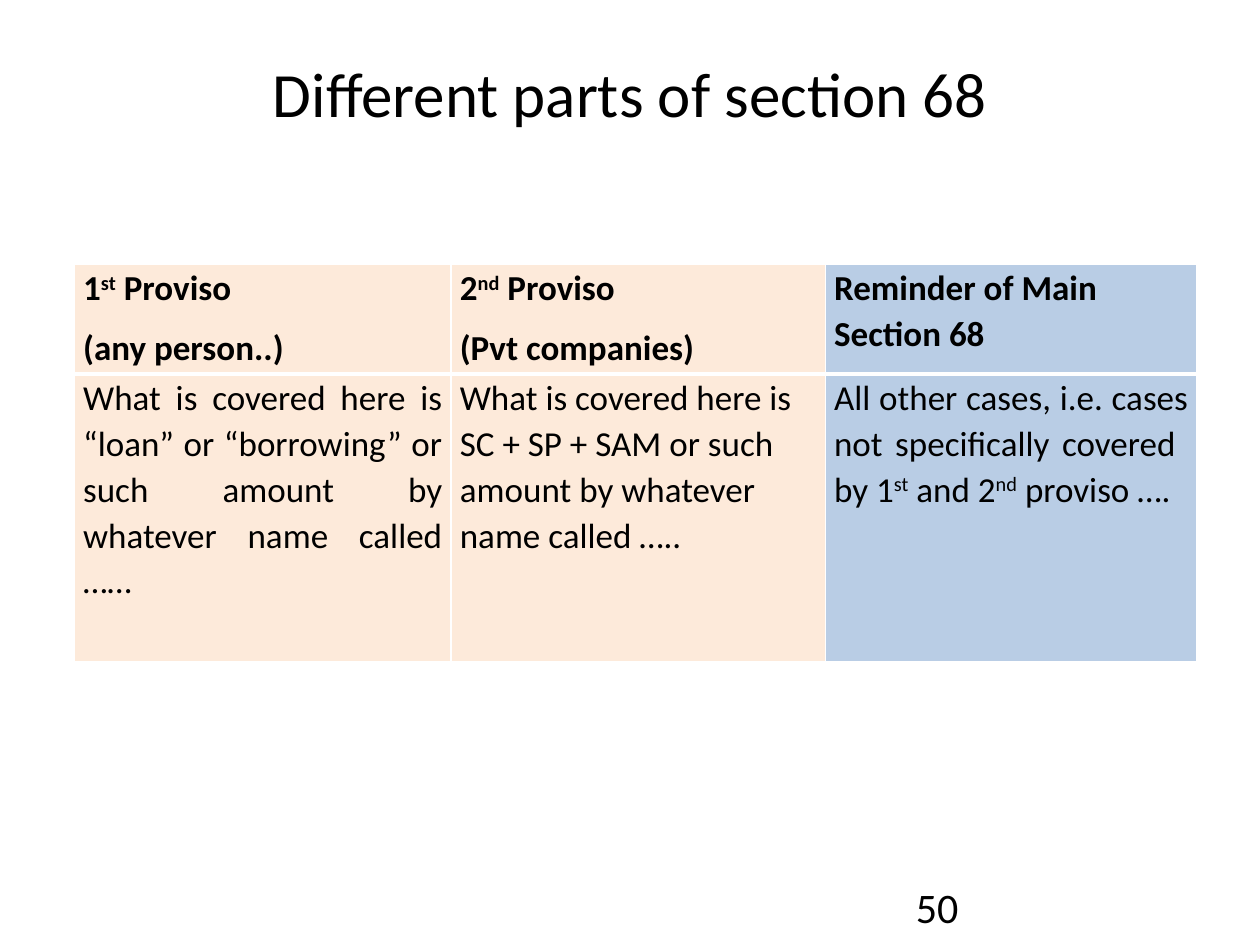
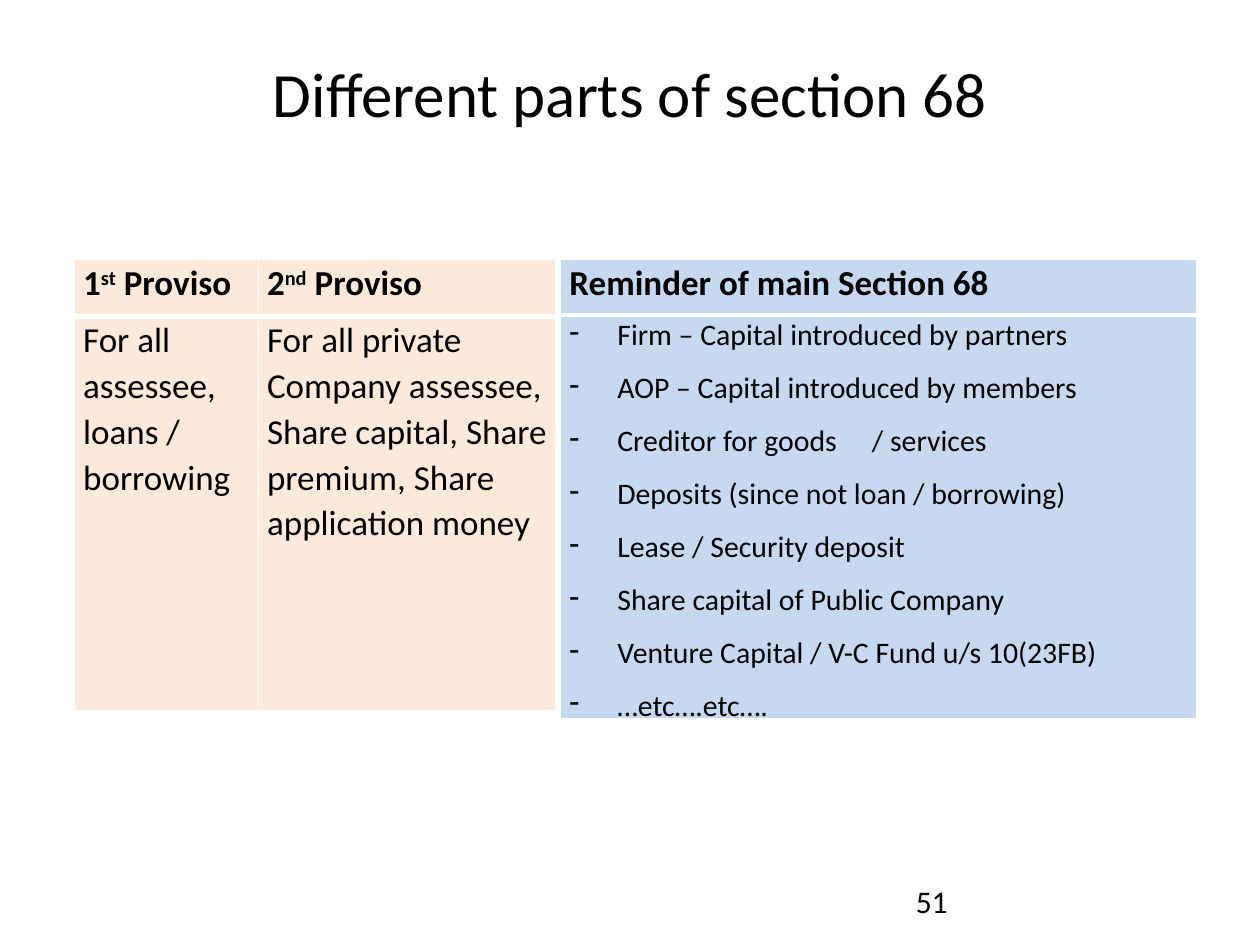
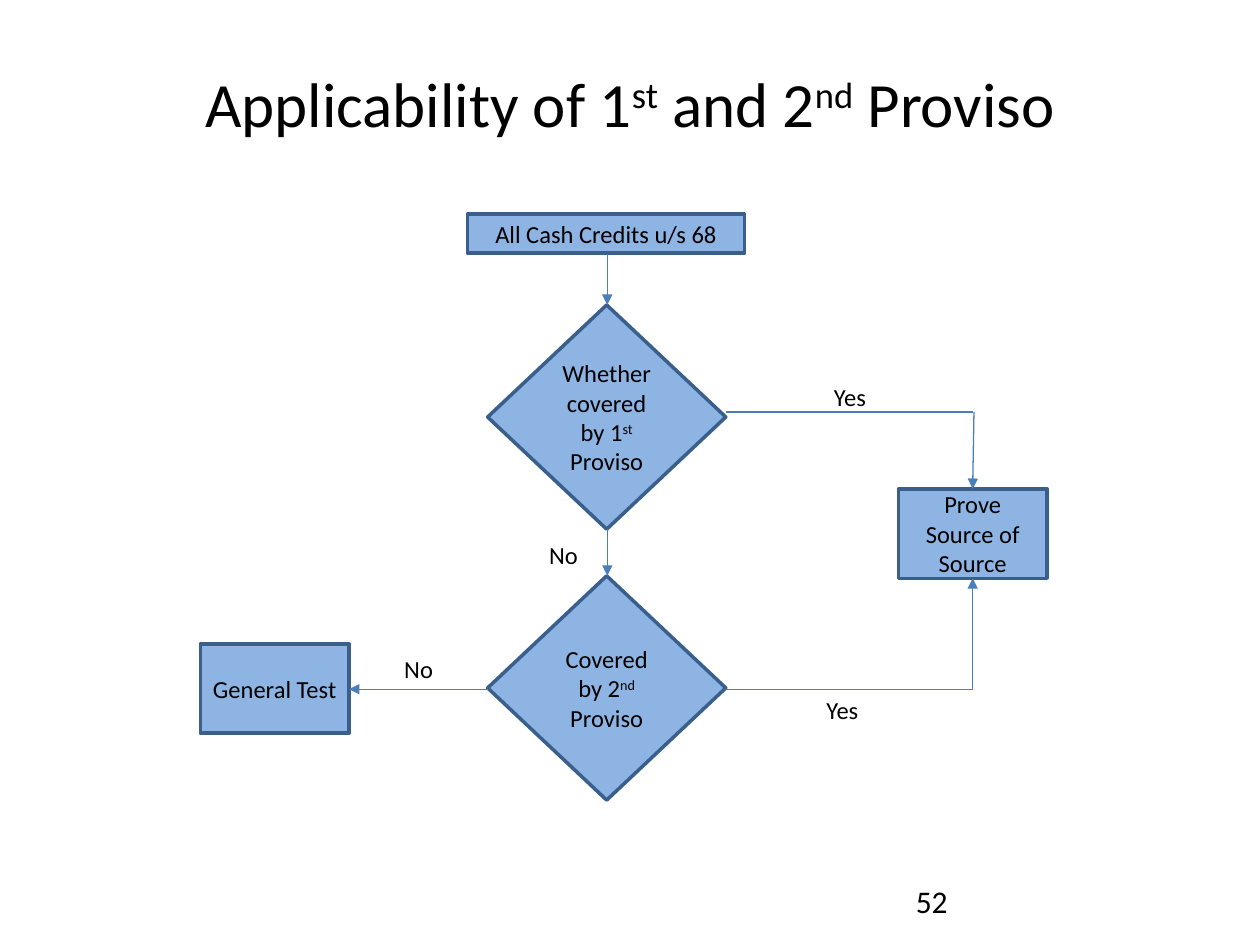
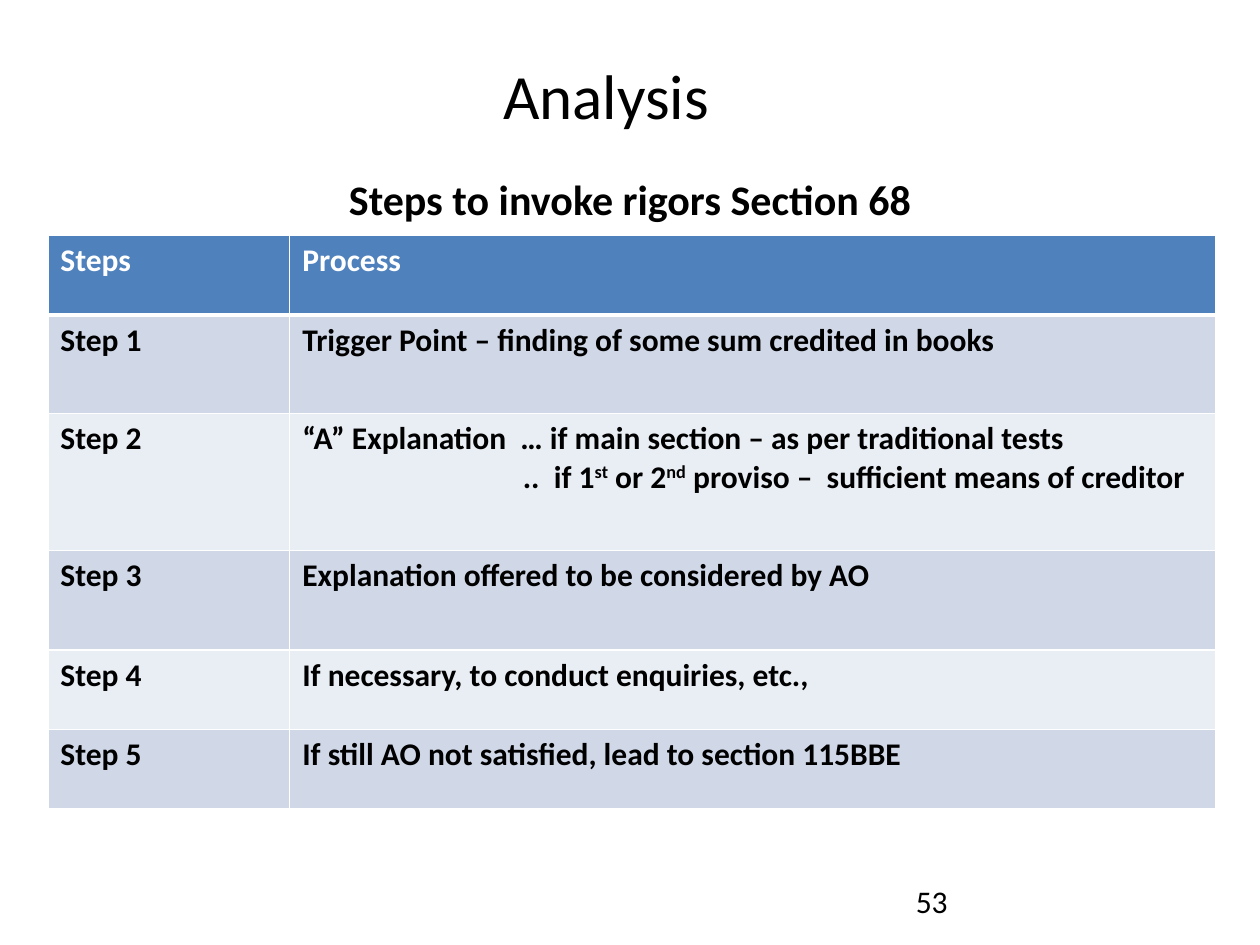
from lxml import etree
from pptx import Presentation
from pptx.dml.color import RGBColor
from pptx.enum import shapes, text
from pptx.oxml.ns import qn
from pptx import util as u

PX = 9144  # one px is a hundredth of an inch
COLORS = {
    "ink": "000000", "white": "FFFFFF",
    "peach": "FDEADA", "steel": "B9CDE5", "sky": "C6D9F1",
    "box": "8EB4E3", "box_edge": "3A5F8C", "arrow": "4B7EBC",
    "head": "4F81BD", "band_dark": "D0D8E8", "band_light": "E9EDF4",
}
FONT = "Calibri"
LEFT, CENTER, JUSTIFY = (text.PP_ALIGN.LEFT, text.PP_ALIGN.CENTER,
                         text.PP_ALIGN.JUSTIFY)
TITLE_ONLY, TITLE_BODY = 5, 1


def px(*values):
    return [u.Emu(v * PX) for v in values]


def rgb(name):
    return RGBColor.from_string(COLORS[name])


def sub(parent, tag, **attrs):
    return etree.SubElement(parent, qn(tag), attrs)


class Deck:
    def __init__(self):
        self.prs = Presentation()
        self.prs.slide_width, self.prs.slide_height = px(1000, 750)
        self.slide = None

    def add_slide(self, title, box, number, number_size=18, layout=TITLE_ONLY):
        self.slide = self.prs.slides.add_slide(self.prs.slide_layouts[layout])
        self.placeholder(0, box, title, 36, margin_top=7)
        self.label(717, 695, 233, 40, number, number_size)

    def placeholder(self, idx, box, words, size, bold=False, margin_top=5):
        sp = self.slide.placeholders[idx]
        sp.left, sp.top, sp.width, sp.height = px(*box)
        tf = sp.text_frame
        tf.auto_size = text.MSO_AUTO_SIZE.NONE
        tf.vertical_anchor = text.MSO_ANCHOR.TOP
        tf.margin_top = px(margin_top)[0]
        self.set_text(tf, [words], size, bold, align=CENTER)
        p = tf.paragraphs[0]
        p.space_before = u.Pt(0)
        pPr = p._p.get_or_add_pPr()
        pPr.set("marL", "0")
        pPr.set("indent", "0")
        sub(pPr, "a:buNone")

    def set_text(self, tf, lines, size, bold=False, color="ink", align=LEFT,
                 loose=False, dash=False, indents=(), tab=None):
        """Fill a frame; pieces between ^ marks are set as superscript."""
        for i, line in enumerate(lines):
            p = tf.paragraphs[0] if i == 0 else tf.add_paragraph()
            p.alignment = align
            if loose:
                p.line_spacing = 1.07
                p.space_after = u.Pt(8)
            pPr = p._p.get_or_add_pPr()
            if dash:
                pPr.set("marL", str(38 * PX))
                pPr.set("indent", str(-38 * PX))
                sub(pPr, "a:buChar", char="-")
            if i < len(indents):
                pPr.set("marL", str(indents[i] * PX))
            if tab and "\t" in line:
                sub(sub(pPr, "a:tabLst"), "a:tab", pos=str(tab * PX), algn="l")
            for j, piece in enumerate(line.split("^")):
                if not piece:
                    continue
                r = p.add_run()
                r.text = piece
                r.font.name, r.font.size, r.font.bold = FONT, u.Pt(size), bold
                r.font.color.rgb = rgb(color)
                if j % 2:
                    r._r.get_or_add_rPr().set("baseline", "30000")

    def label(self, x, y, w, h, words, size=14):
        tf = self.slide.shapes.add_textbox(*px(x, y, w, h)).text_frame
        tf.word_wrap = True
        self.set_text(tf, [words], size)

    def node(self, kind, x, y, w, h, words):
        sp = self.slide.shapes.add_shape(kind, *px(x, y, w, h))
        sp.shadow.inherit = False
        sp.fill.solid()
        sp.fill.fore_color.rgb = rgb("box")
        sp.line.color.rgb = rgb("box_edge")
        sp.line.width = u.Pt(2)
        tf = sp.text_frame
        tf.word_wrap = True
        tf.vertical_anchor = text.MSO_ANCHOR.MIDDLE
        self.set_text(tf, [words], 14, align=CENTER)

    def line(self, x1, y1, x2, y2, arrow=True):
        cx = self.slide.shapes.add_connector(
            shapes.MSO_CONNECTOR.STRAIGHT, *px(x1, y1, x2, y2))
        cx.line.color.rgb = rgb("arrow")
        cx.line.width = u.Pt(0.75)
        if arrow:
            sub(cx.line._get_or_add_ln(), "a:tailEnd", type="triangle")
        sub(cx._element.spPr, "a:effectLst")

    def borders(self, cell, is_head):
        tcPr = cell._tc.get_or_add_tcPr()
        for side in "LRTB":
            width = u.Pt(3 if is_head and side == "B" else 1)
            ln = sub(tcPr, f"a:ln{side}", w=str(int(width)))
            sub(sub(ln, "a:solidFill"), "a:srgbClr", val=COLORS["white"])

    def table(self, x, y, widths, heights, rows, fills, tight=False):
        """Each cell is a dict of set_text() arguments; each row has one fill."""
        frame = self.slide.shapes.add_table(
            len(rows), len(widths), *px(x, y, sum(widths), sum(heights)))
        tbl = frame.table
        tbl.first_row = tbl.horz_banding = False
        for col, w in zip(tbl.columns, px(*widths)):
            col.width = w
        for row, h in zip(tbl.rows, px(*heights)):
            row.height = h
        for i, row in enumerate(rows):
            for j, content in enumerate(row):
                cell = tbl.cell(i, j)
                if tight:
                    (cell.margin_left, cell.margin_right,
                     cell.margin_top, cell.margin_bottom) = px(7, 7, 0, 0)
                self.borders(cell, i == 0)
                cell.fill.solid()
                cell.fill.fore_color.rgb = rgb(fills[i])
                self.set_text(cell.text_frame, loose=tight, **content)


def head(*lines):
    return dict(lines=lines, size=20, bold=True)


def body(*lines, size=20, **style):
    return dict(lines=lines, size=size, **style)


def step(*lines, color="ink", **style):
    return dict(lines=lines, size=18, bold=True, color=color, **style)


def parts_overview(deck):
    deck.add_slide("Different parts of section 68", (50, 36, 900, 103), "50", 24)
    heights = (87, 228)
    deck.table(655, 210, (295,), heights, [
        [head("Reminder of Main Section 68")],
        [body("All other cases, i.e. cases not specifically covered  "
              "by 1^st^ and 2^nd^ proviso ….", align=JUSTIFY)],
    ], ["steel"] * 2, tight=True)
    deck.table(59, 210, (299, 297), heights, [
        [head("1^st^ Proviso", "(any person..)"),
         head("2^nd^ Proviso", "(Pvt companies)")],
        [body("What is covered here is “loan” or “borrowing” or such amount "
              "by whatever name called ……", align=JUSTIFY),
         body("What is covered here is SC + SP + SAM or such amount "
              "by whatever name called …..")],
    ], ["peach"] * 2, tight=True)


def parts_detail(deck):
    deck.add_slide("Different parts of section 68", (50, 36, 900, 103), "51")
    deck.table(59, 206, (146, 236), (45, 313), [
        [head("1^st^ Proviso"), head("2^nd^ Proviso")],
        [body("For all assessee, loans / borrowing"),
         body("For all private Company assessee, Share capital, "
              "Share premium, Share application money")],
    ], ["peach"] * 2, tight=True)
    deck.table(445, 206, (505,), (44, 315), [
        [head("Reminder of main Section 68")],
        [body("Firm – Capital introduced by partners",
              "AOP – Capital introduced by members",
              "Creditor for goods\t/ services",
              "Deposits (since not loan / borrowing)",
              "Lease / Security deposit",
              "Share capital of Public Company",
              "Venture Capital / V-C Fund u/s 10(23FB)",
              "…etc….etc….", size=17, dash=True, tab=240)],
    ], ["sky"] * 2, tight=True)


def flowchart(deck):
    deck.add_slide("Applicability of 1^st^ and 2^nd^ Proviso",
                   (50, 44, 900, 111), "52")
    rect, diamond = shapes.MSO_SHAPE.RECTANGLE, shapes.MSO_SHAPE.DIAMOND
    deck.node(rect, 371, 170, 220, 31, "All Cash Credits u/s 68")
    deck.node(diamond, 387, 242, 189, 178, "Whether covered by 1^st^ Proviso")
    deck.node(diamond, 387, 457, 189, 178, "Covered by 2^nd^ Proviso")
    deck.node(rect, 713, 388, 118, 71, "Prove Source of Source")
    deck.node(rect, 159, 511, 118, 71, "General Test")
    middle, source, yes1, yes2 = 482, 772, 327, 547
    deck.line(middle, 202, middle, 242)
    deck.line(middle, 420, middle, 457)
    deck.line(387, yes2, 277, yes2)
    deck.line(576, yes1, source, yes1, arrow=False)
    deck.line(source + 1, yes1, source, 388)
    deck.line(576, yes2, source, yes2, arrow=False)
    deck.line(source, yes2, source, 459)
    for x, y, answer in ((426, 424, "No"), (311, 514, "No"),
                         (652, 298, "Yes"), (646, 547, "Yes")):
        deck.label(x, y, 55, 34, answer)


def analysis(deck):
    deck.add_slide("Analysis", (31, 38, 900, 108), "53", layout=TITLE_BODY)
    deck.placeholder(1, (50, 133, 900, 537), "Steps to invoke rigors Section 68",
                     24, bold=True)
    processes = [
        step("Trigger Point – finding of some sum credited in books"),
        step("“A” Explanation  … if main section – as per traditional tests",
             "..  if 1^st^ or 2^nd^ proviso –  sufficient means of creditor",
             indents=(0, 175)),
        step("Explanation offered to be considered by AO"),
        step("If necessary, to conduct enquiries, etc.,"),
        step("If still AO not satisfied, lead to section 115BBE"),
    ]
    rows = [[step("Steps", color="white"), step("Process", color="white")]]
    rows += [[step(f"Step {n}"), process] for n, process in enumerate(processes, 1)]
    fills = ["head"] + ["band_dark" if n % 2 == 0 else "band_light"
                        for n in range(len(processes))]
    deck.table(38, 187, (192, 735), (63, 78, 109, 79, 63, 63), rows, fills)


def main():
    deck = Deck()
    for build in (parts_overview, parts_detail, flowchart, analysis):
        build(deck)
    deck.prs.save("out.pptx")


if __name__ == "__main__":
    main()
